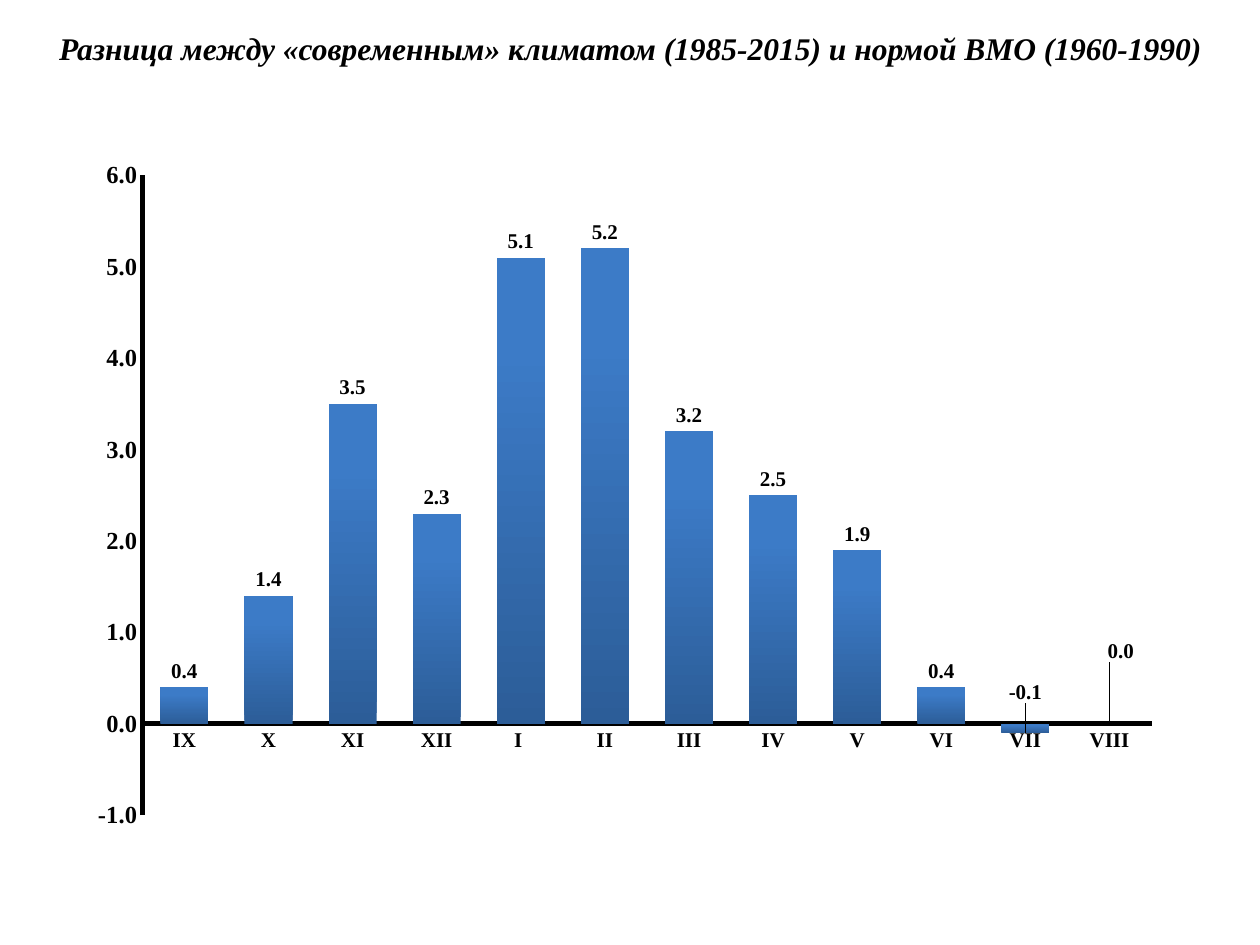
from lxml import etree
from pptx import Presentation
from pptx.chart.data import CategoryChartData
from pptx.dml.color import RGBColor
from pptx.enum.chart import XL_CHART_TYPE, XL_LABEL_POSITION, XL_TICK_MARK
from pptx.enum.text import MSO_ANCHOR, PP_ALIGN
from pptx.oxml import parse_xml
from pptx.oxml.ns import nsdecls, qn
from pptx.util import Inches, Pt

COLUMN = XL_CHART_TYPE.COLUMN_CLUSTERED
OUTSIDE = XL_LABEL_POSITION.OUTSIDE_END
NO_TICK = XL_TICK_MARK.NONE

TITLE = "Разница между «современным» климатом (1985-2015) и нормой ВМО (1960-1990)"
SERIES = "Отклонения от нормы 1985-2015 г."
MONTHS = ["IX", "X", "XI", "XII", "I ", "II", "III", "IV", "V", "VI", "VII", "VIII"]
DIFFS = [0.4, 1.4, 3.5, 2.3, 5.1, 5.2, 3.2, 2.5, 1.9, 0.4, -0.1, 0]

WIDE, HIGH = 10, 7.5
TITLE_BOX = (0.28, 0, 9.45, 0.76)
CHART_BOX = (0.5, 1.07, 9, 6.43)
PLOT = {"x": 0.07, "y": 0.05, "w": 0.89, "h": 0.79}  # shares of the chart
SHIFTS = {10: {"x": 0, "y": -0.07}, 11: {"x": 0.01, "y": -0.07}}
STOPS = [(0, "2C5D98"), (0.8, "3C7BC7")]
FACE, BLACK, FORMAT = "Times New Roman", "000000", "0.0"


def color(text):
    return RGBColor.from_string(text)


def style(font, size, **more):
    form = {"name": FACE, "size": Pt(size), "bold": True, **more}
    for key, value in form.items():
        setattr(font, key, value)
    font.color.rgb = color(BLACK)


def layout(parts, inner=False):
    """Return a manual chart layout with its parts as shares of the chart."""
    node = parse_xml(f"<c:layout {nsdecls('c')}><c:manualLayout/></c:layout>")
    items = {}
    if inner:
        items = {"layoutTarget": "inner", "xMode": "edge", "yMode": "edge"}
    for key, value in {**items, **parts}.items():
        etree.SubElement(node[0], qn("c:" + key)).set("val", str(value))
    return node


def add_title(slide):
    title = slide.shapes.title
    title.left, title.top, title.width, title.height = map(Inches, TITLE_BOX)
    frame = title.text_frame
    frame.text = TITLE
    frame.word_wrap = True
    frame.vertical_anchor = MSO_ANCHOR.MIDDLE
    line = frame.paragraphs[0]
    line.alignment = PP_ALIGN.CENTER
    style(line.runs[0].font, 18, italic=True)


def format_axes(chart):
    for axis, size in ((chart.category_axis, 12), (chart.value_axis, 14)):
        axis.has_major_gridlines = False
        axis.major_tick_mark = axis.minor_tick_mark = NO_TICK
        axis.format.line.width = Pt(3)
        axis.format.line.color.rgb = color(BLACK)
        style(axis.tick_labels.font, size)
    scale = chart.value_axis
    scale.minimum_scale, scale.maximum_scale, scale.major_unit = -1, 6, 1
    scale.tick_labels.number_format = FORMAT
    scale.tick_labels.number_format_is_linked = False


def format_bars(plot):
    plot.gap_width = 75
    plot.vary_by_categories = False
    bars = plot.series[0]
    bars.invert_if_negative = False
    fill = bars.format.fill
    fill.gradient()
    fill.gradient_angle = 90
    for stop, (place, tone) in zip(fill.gradient_stops, STOPS):
        stop.position = place
        stop.color.rgb = color(tone)
    return bars


def format_labels(bars):
    labels = bars.data_labels
    labels.show_value = True
    labels.number_format = FORMAT
    labels.number_format_is_linked = False
    labels.position = OUTSIDE
    style(labels.font, 12)
    for index in SHIFTS:
        label = bars.points[index].data_label
        label.position = OUTSIDE
        style(label.font, 12)
    for node in bars.format.fill and chart_labels(bars):
        index = int(node.find(qn("c:idx")).get("val"))
        node.insert(1, layout(SHIFTS[index]))
        node.insert(2, parse_xml(
            f'<c:numFmt {nsdecls("c")} formatCode="{FORMAT}" sourceLinked="0"/>'))


def chart_labels(bars):
    return list(bars.data_labels._element.iter(qn("c:dLbl")))


def add_chart(slide):
    data = CategoryChartData(number_format=FORMAT)
    data.categories = MONTHS
    data.add_series(SERIES, DIFFS)
    chart = slide.shapes.add_chart(COLUMN, *map(Inches, CHART_BOX), data).chart
    chart.has_title = chart.has_legend = False
    chart.font.name, chart.font.size = "Calibri", Pt(10)
    format_axes(chart)
    format_labels(format_bars(chart.plots[0]))
    area = chart.plots[0]._element.getparent()
    for old in area.findall(qn("c:layout")):
        area.remove(old)
    area.insert(0, layout(PLOT, inner=True))


def main():
    deck = Presentation()
    deck.slide_width, deck.slide_height = Inches(WIDE), Inches(HIGH)
    slide = deck.slides.add_slide(deck.slide_layouts[5])
    add_title(slide)
    add_chart(slide)
    deck.save("out.pptx")


if __name__ == "__main__":
    main()
